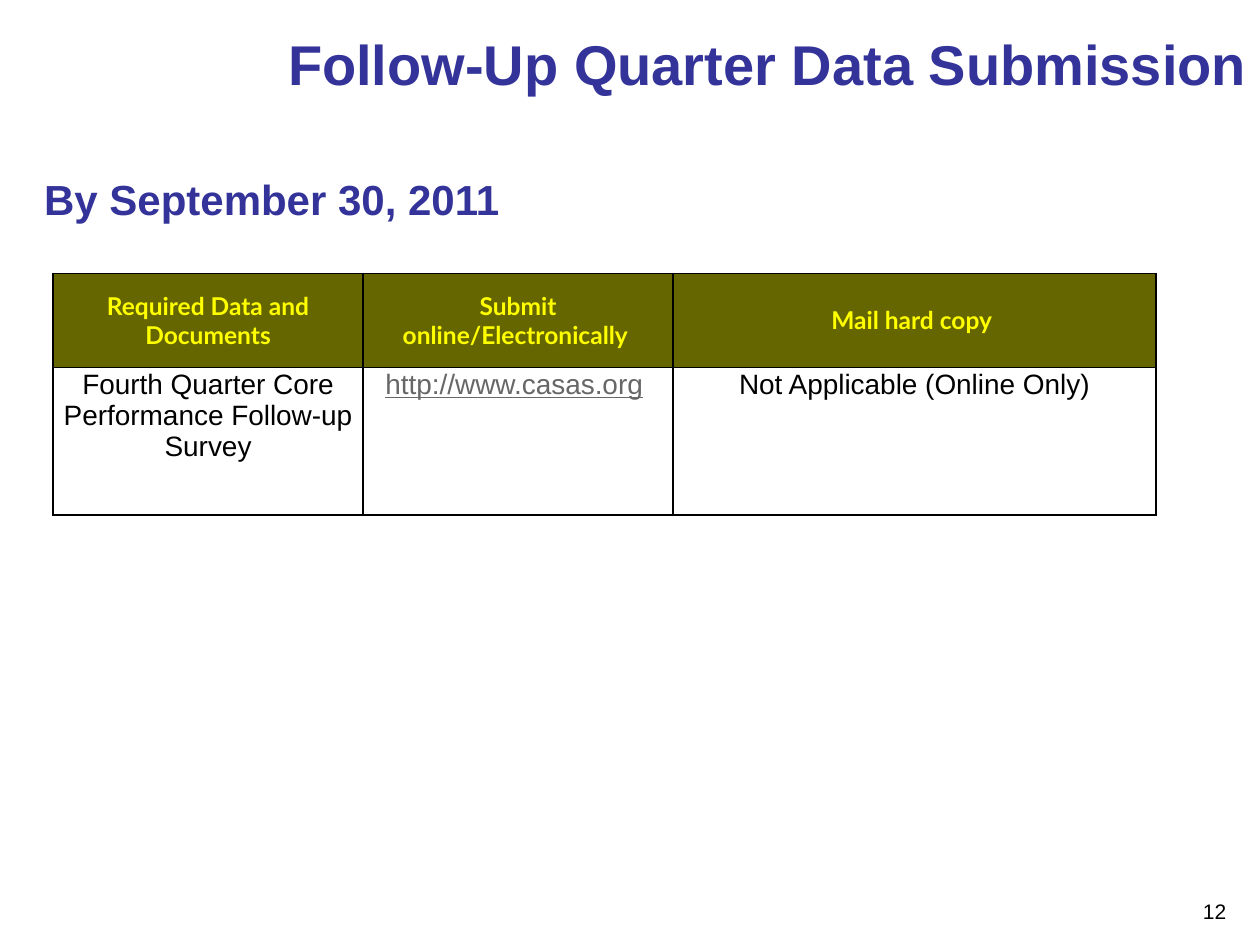
from lxml import etree
from pptx import Presentation
from pptx.dml.color import RGBColor
from pptx.enum.text import MSO_ANCHOR, PP_ALIGN
from pptx.oxml.ns import qn
from pptx.util import Cm, Pt

LEFT, CENTER, RIGHT = PP_ALIGN.LEFT, PP_ALIGN.CENTER, PP_ALIGN.RIGHT
TOP, MIDDLE = MSO_ANCHOR.TOP, MSO_ANCHOR.MIDDLE

COLORS = {
    "heading": "333399",
    "body": "000000",
    "link": "676767",
    "header_text": "FFFF00",
    "header_fill": "666600",
    "border": "000000",
}
COLUMN_WIDTHS = (6.25, 6.25, 9.73)
ROW_HEIGHTS = (1.9, 2.97)
ROWS = (
    ("Required Data and Documents", "Submit online/Electronically ", "Mail hard copy "),
    ("Fourth Quarter Core Performance Follow-up Survey", "http://www.casas.org ",
     "Not Applicable (Online Only)"),
)
LINK_CELL = (1, 1)


def style_text(frame, size, color, align, name="Arial", bold=False):
    para = frame.paragraphs[0]
    para.alignment = align
    for span in para.runs:
        span.font.name = name
        span.font.size = Pt(size)
        span.font.bold = bold
        span.font.color.rgb = RGBColor.from_string(COLORS[color])


def add_label(page, box, text, size, color, align, anchor=MIDDLE, bold=False, wrap=True):
    frame = page.shapes.add_textbox(*(Cm(length) for length in box)).text_frame
    frame.word_wrap = wrap
    frame.vertical_anchor = anchor
    frame.text = text
    style_text(frame, size, color, align, bold=bold)


def add_borders(cell):
    properties = cell._tc.get_or_add_tcPr()
    for position, side in enumerate(("lnL", "lnR", "lnT", "lnB")):
        line = etree.Element(qn(f"a:{side}"), w=str(Pt(1)))
        fill = etree.SubElement(line, qn("a:solidFill"))
        etree.SubElement(fill, qn("a:srgbClr"), val=COLORS["border"])
        properties.insert(position, line)


def fill_cell(cell, text, is_header):
    cell.margin_left = cell.margin_right = cell.margin_top = cell.margin_bottom = Cm(0.03)
    cell.text_frame.text = text
    if is_header:
        cell.vertical_anchor = MIDDLE
        cell.fill.solid()
        cell.fill.fore_color.rgb = RGBColor.from_string(COLORS["header_fill"])
        style_text(cell.text_frame, 14, "header_text", CENTER, name="Lato", bold=True)
    else:
        cell.vertical_anchor = TOP
        cell.fill.background()
        style_text(cell.text_frame, 16, "body", CENTER)
    add_borders(cell)


def mark_address(cell):
    """Underline the web address, leaving the space after it plain."""
    para = cell.text_frame.paragraphs[0]
    address = para.runs[0]
    address.text = address.text.rstrip()
    para.add_run().text = " "
    style_text(cell.text_frame, 16, "body", CENTER)
    address.font.underline = True
    address.font.color.rgb = RGBColor.from_string(COLORS["link"])


def add_submission_table(page, left, top):
    table = page.shapes.add_table(
        len(ROWS), len(COLUMN_WIDTHS), Cm(left), Cm(top),
        Cm(sum(COLUMN_WIDTHS)), Cm(sum(ROW_HEIGHTS))).table
    table.horz_banding = False
    for column, width in zip(table.columns, COLUMN_WIDTHS):
        column.width = Cm(width)
    for row, height in zip(table.rows, ROW_HEIGHTS):
        row.height = Cm(height)
    for row_index, texts in enumerate(ROWS):
        for column_index, text in enumerate(texts):
            fill_cell(table.cell(row_index, column_index), text, row_index == 0)
    mark_address(table.cell(*LINK_CELL))


def main():
    deck = Presentation()
    deck.slide_width, deck.slide_height = Cm(25.4), Cm(19.05)
    page = deck.slides.add_slide(deck.slide_layouts[6])

    # Page number
    add_label(page, (19.05, 17.98, 5.92, 0.69), "12", 12, "body", RIGHT, anchor=TOP)
    # Title and deadline
    add_label(page, (0, 0, 25.4, 2.54), "Follow-Up Quarter Data Submission",
              32, "heading", RIGHT, bold=True)
    add_label(page, (0.64, 3.38, 9.78, 1.27), "By September 30, 2011",
              24, "heading", LEFT, bold=True, wrap=False)
    # Required documents
    add_submission_table(page, 1.07, 5.51)

    deck.save("out.pptx")


if __name__ == "__main__":
    main()
